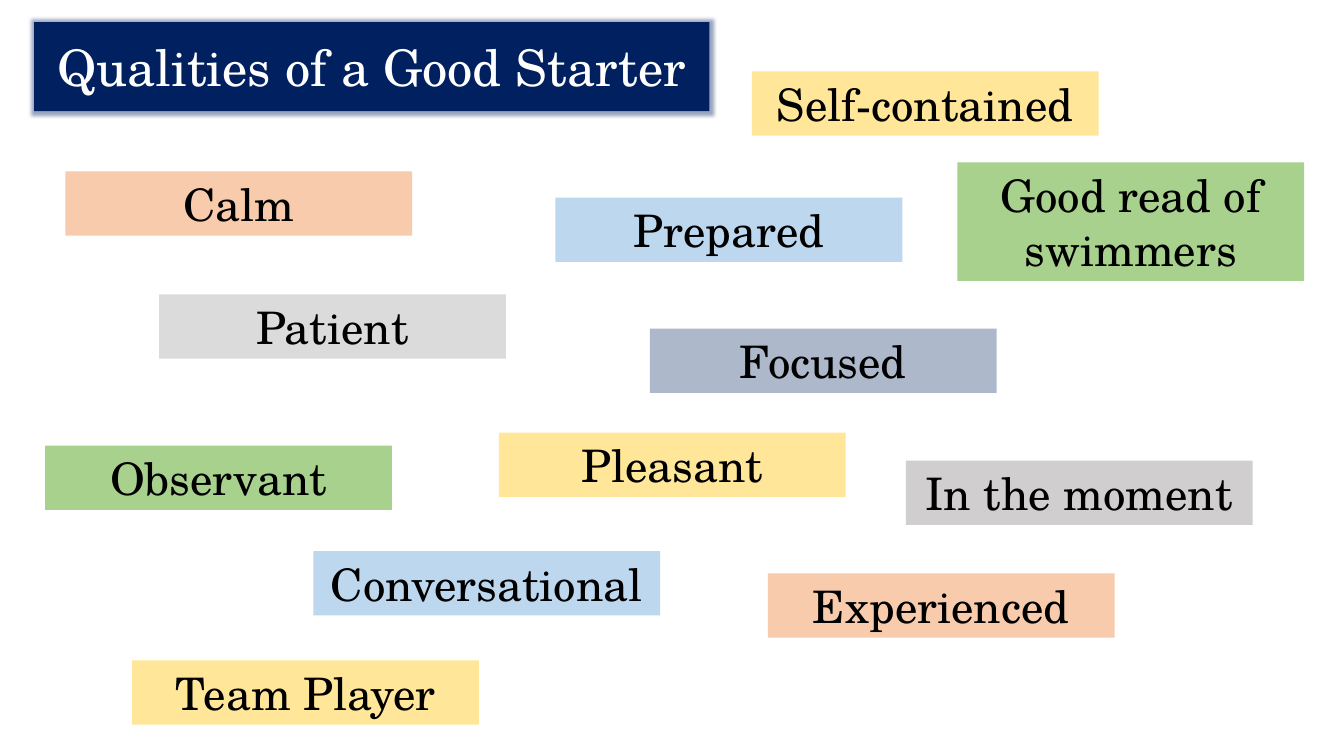
from lxml import etree
from pptx import Presentation
from pptx.dml.color import RGBColor
from pptx.enum.shapes import MSO_SHAPE
from pptx.enum.text import MSO_ANCHOR, MSO_AUTO_SIZE, PP_ALIGN
from pptx.oxml import parse_xml
from pptx.oxml.ns import nsdecls
from pptx.util import Cm, Pt

FONT = "TeX Gyre Schola"
NAVY, WHITE, BLACK = "002060", "FFFFFF", "000000"
PEACH, YELLOW, GREEN, BLUE = "F8CBAD", "FFE699", "A9D18E", "BDD7EE"
SILVER, GREY, SLATE = "DBDBDB", "D0CECE", "ADB9CA"

CARD_WIDTH = 8.74
ONE_LINE, TWO_LINES = 1.62, 2.99

# Text, left, top, height (cm) and fill of each quality
QUALITIES = [
    ("Calm", 1.65, 4.32, ONE_LINE, PEACH),
    ("Patient", 4.01, 7.42, ONE_LINE, SILVER),
    ("Pleasant", 12.57, 10.9, ONE_LINE, YELLOW),
    ("Observant", 1.14, 11.23, ONE_LINE, GREEN),
    ("Focused", 16.38, 8.28, ONE_LINE, SLATE),
    ("Experienced", 19.35, 14.45, ONE_LINE, PEACH),
    ("Conversational", 7.9, 13.89, ONE_LINE, BLUE),
    ("Good read of swimmers", 24.13, 4.09, TWO_LINES, GREEN),
    ("In the moment", 22.83, 11.61, ONE_LINE, GREY),
    ("Prepared", 14, 4.98, ONE_LINE, BLUE),
    ("Self-contained", 18.95, 1.8, ONE_LINE, YELLOW),
    ("Team Player", 3.33, 16.64, ONE_LINE, YELLOW),
]


def color(value):
    return RGBColor.from_string(value)


def set_values(target, values):
    for name, value in values.items():
        setattr(target, name, value)


def fill_box(box, fill):
    box.fill.solid()
    box.fill.fore_color.rgb = color(fill)
    box.line.fill.background()


def write_text(box, text, size, text_color, auto_size):
    frame = box.text_frame
    set_values(frame, {"word_wrap": True, "auto_size": auto_size,
                       "vertical_anchor": MSO_ANCHOR.MIDDLE})
    para = frame.paragraphs[0]
    para.alignment = PP_ALIGN.CENTER
    span = para.add_run()
    span.text = text
    set_values(span.font, {"name": FONT, "size": Pt(size)})
    span.font.color.rgb = color(text_color)


def add_glow(box, glow_color, radius, opacity):
    box._element.spPr.append(parse_xml(
        f'<a:effectLst {nsdecls("a")}><a:glow rad="{Pt(radius)}">'
        f'<a:srgbClr val="{glow_color}"><a:alpha val="{opacity * 1000}"/>'
        '</a:srgbClr></a:glow></a:effectLst>'))


def round_corners(box):
    geometry = parse_xml(f'<a:prstGeom {nsdecls("a")} prst="roundRect"/>')
    etree.SubElement(geometry, geometry.tag.replace("prstGeom", "avLst"))
    box._element.spPr.append(geometry)


def format_title(title):
    set_values(title, {"left": Cm(0.86), "top": Cm(0.56),
                       "width": Cm(17.02), "height": Cm(2.24)})
    round_corners(title)
    fill_box(title, NAVY)
    add_glow(title, NAVY, radius=5, opacity=40)
    write_text(title, "Qualities of a Good Starter", 36, WHITE,
               MSO_AUTO_SIZE.NONE)


def add_card(page, text, left, top, height, fill):
    card = page.shapes.add_shape(MSO_SHAPE.RECTANGLE, Cm(left), Cm(top),
                                 Cm(CARD_WIDTH), Cm(height))
    card.shadow.inherit = False
    fill_box(card, fill)
    write_text(card, text, 32, BLACK, MSO_AUTO_SIZE.SHAPE_TO_FIT_TEXT)


def main():
    deck = Presentation()
    set_values(deck, {"slide_width": Cm(33.87), "slide_height": Cm(19.05)})
    page = deck.slides.add_slide(deck.slide_layouts[5])

    # Title banner
    format_title(page.shapes.title)

    # Scattered quality cards
    for quality in QUALITIES:
        add_card(page, *quality)

    deck.save("out.pptx")


if __name__ == "__main__":
    main()
